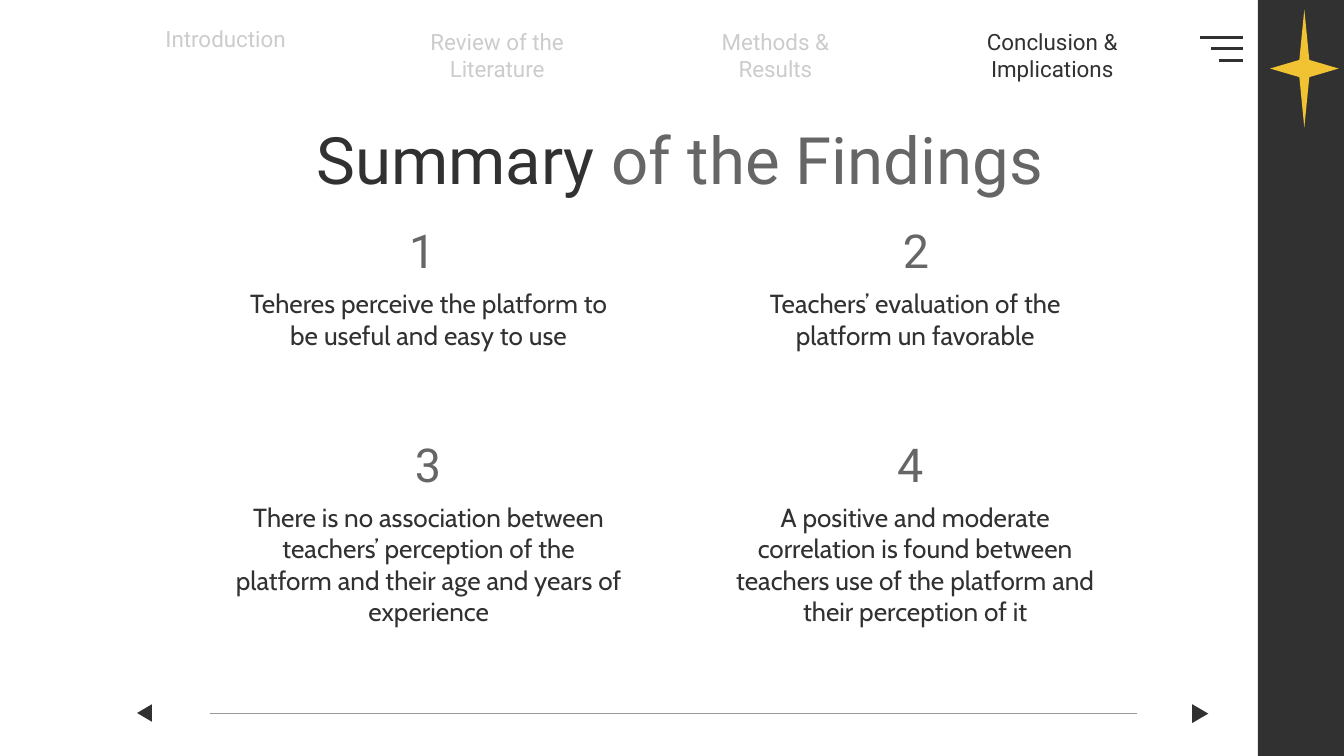
from pptx import Presentation
from pptx.dml.color import RGBColor
from pptx.enum import shapes, text
from pptx.oxml import parse_xml
from pptx.oxml.ns import nsdecls
from pptx.util import Inches, Pt

WIDTH = 10
HEIGHT = WIDTH * 9 / 16
DARK, GREY, PALE, RULE, GOLD = "313131", "666666", "CCCCCC", "999999", "F1C232"

NAVIGATION = [
    ("Introduction", 0.9, 0.09, PALE),
    ("Review of the Literature", 2.92, 0.11, PALE),
    ("Methods & Results", 4.99, 0.11, PALE),
    ("Conclusion & Implications", 7.05, 0.11, DARK),
]
# The space after 1 and 4 shifts those centred numerals slightly left.
FINDINGS = [
    ("1 ", "Teheres perceive the platform to be useful and easy to use"),
    ("2", "Teachers’ evaluation of the platform un favorable"),
    ("3", "There is no association between teachers’ perception of the "
          "platform and their age and years of experience"),
    ("4 ", "A positive and moderate correlation is found between teachers "
           "use of the platform and their perception of it"),
]


def color(value):
    return RGBColor.from_string(value)


def add_text(page, bounds, spans, size, font="Roboto", inset=0.1,
             anchor=text.MSO_ANCHOR.TOP):
    """Add a centred text box; spans are (wording, colour) pairs."""
    box = page.shapes.add_textbox(*map(Inches, bounds))
    frame = box.text_frame
    frame.word_wrap = True
    frame.vertical_anchor = anchor
    frame.margin_left = frame.margin_right = Inches(inset)
    frame.margin_top = frame.margin_bottom = Inches(inset)
    para = frame.paragraphs[0]
    para.alignment = text.PP_ALIGN.CENTER
    for wording, shade in spans:
        span = para.add_run()
        span.text = wording
        span.font.name = font
        span.font.size = Pt(size)
        span.font.color.rgb = color(shade)


def add_shape(page, kind, bounds, fill, rotation=0):
    shape = page.shapes.add_shape(kind, *map(Inches, bounds))
    shape.shadow.inherit = False
    shape.fill.solid()
    shape.fill.fore_color.rgb = color(fill)
    shape.line.fill.background()
    shape.rotation = rotation
    return shape


def add_horizontal_line(page, left, right, top, shade, width):
    line = page.shapes.add_connector(
        shapes.MSO_CONNECTOR.STRAIGHT,
        Inches(left), Inches(top), Inches(right), Inches(top))
    line.line.color.rgb = color(shade)
    line.line.width = Pt(width)
    line._element.spPr.append(parse_xml(f"<a:effectLst {nsdecls('a')}/>"))


def add_finding(page, index, number, statement):
    row, column = divmod(index, 2)
    top = 1.64 + 1.59 * row
    add_text(page, (1.65 + 3.62 * column, top + 0.4, 3.08, 0.88),
             [(statement, DARK)], 14, font="Cabin")
    add_text(page, (1.73 + 3.63 * column, top, 2.91, 0.44),
             [(number, GREY)], 25, inset=0, anchor=text.MSO_ANCHOR.MIDDLE)


def add_side_bar(page):
    add_shape(page, shapes.MSO_SHAPE.RECTANGLE, (9.36, 0, 0.64, HEIGHT), DARK)
    star = add_shape(page, shapes.MSO_SHAPE.STAR_4_POINT,
                     (9.45, 0.07, 0.51, 0.88), GOLD)
    star.adjustments[0] = 0.103


def add_menu_icon(page):
    for left, top in ((8.93, 0.28), (9.01, 0.36), (9.07, 0.45)):
        add_horizontal_line(page, left, 9.25, top, DARK, 1.5)


def add_footer(page):
    triangle = shapes.MSO_SHAPE.ISOSCELES_TRIANGLE
    add_horizontal_line(page, 1.56, 8.46, 5.31, RULE, 0.75)
    add_shape(page, triangle, (1.01, 5.25, 0.13, 0.11), DARK, rotation=270)
    add_shape(page, triangle, (8.86, 5.25, 0.14, 0.12), DARK, rotation=90)


def main():
    deck = Presentation()
    deck.slide_width, deck.slide_height = Inches(WIDTH), Inches(HEIGHT)
    page = deck.slides.add_slide(deck.slide_layouts[6])

    add_side_bar(page)
    add_footer(page)
    add_menu_icon(page)
    add_text(page, (0.99, 0.79, 8.14, 0.57),
             [("Summary ", DARK), ("of the Findings", GREY)], 35)
    for index, (number, statement) in enumerate(FINDINGS):
        add_finding(page, index, number, statement)
    for label, left, top, shade in NAVIGATION:
        add_text(page, (left, top, 1.56, 0.44), [(label, shade)], 12)

    deck.save("out.pptx")


if __name__ == "__main__":
    main()
